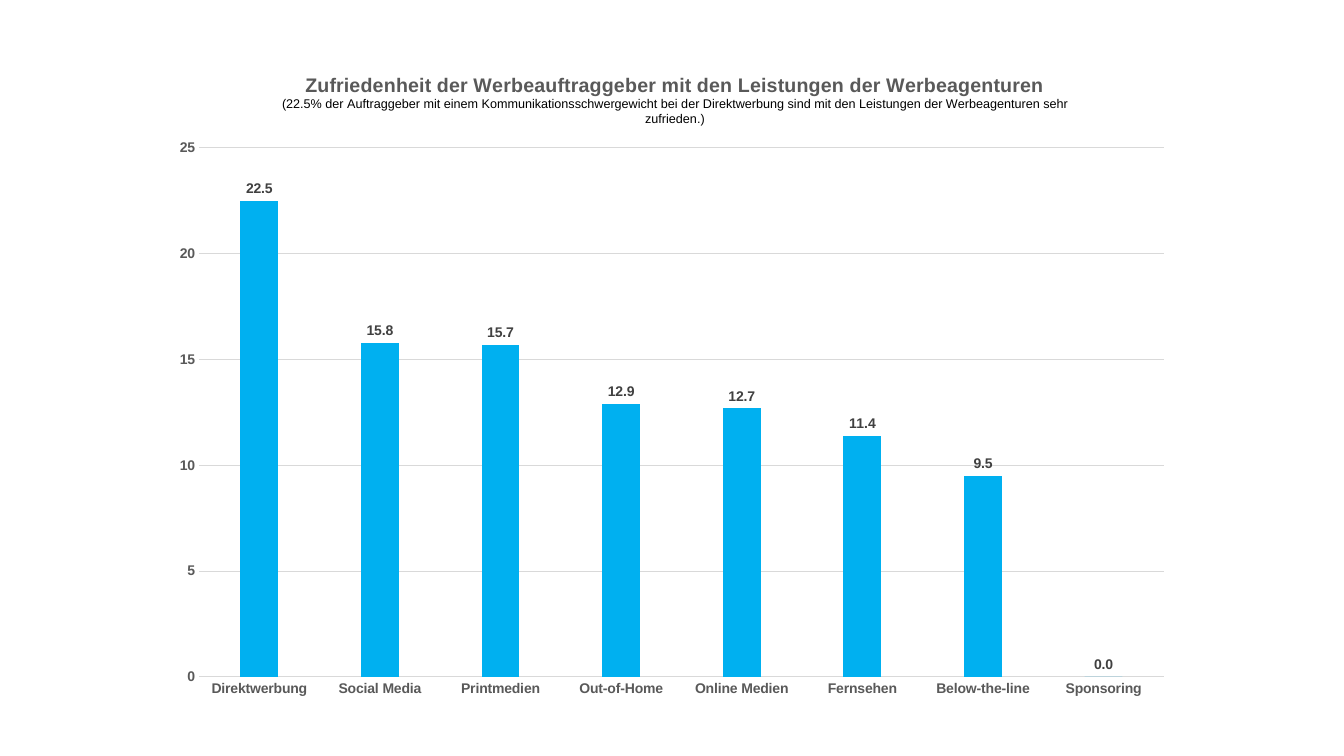
from typing import NamedTuple

from lxml import etree
from pptx import Presentation
from pptx import util as u
from pptx.chart.data import CategoryChartData
from pptx.dml.color import RGBColor
from pptx.enum import chart as ch
from pptx.enum import text
from pptx.oxml import ns

EMU_PER_PX = 914400 / 100.8
FONT = "Arial"
COLORS = {"bar": "00B0F0", "grid": "D9D9D9", "axis": "595959",
          "label": "404040", "subtitle": "000000"}


class Box(NamedTuple):
    left: int
    top: int
    width: int
    height: int


class TitleLine(NamedTuple):
    wording: str
    size: int
    bold: bool
    color: str


CHART = Box(159, 46, 1025, 663)
PLOT = Box(199, 148, 965, 529)
TITLE = Box(279, 70, 786, 52)

TITLE_LINES = [
    TitleLine("Zufriedenheit der Werbeauftraggeber mit den Leistungen der "
              "Werbeagenturen", 14, True, "axis"),
    TitleLine("(22.5% der Auftraggeber mit einem Kommunikationsschwergewicht bei "
              "der Direktwerbung sind mit den Leistungen der Werbeagenturen sehr "
              "zufrieden.)", 9, False, "subtitle"),
]
SATISFACTION = {
    "Direktwerbung": 22.5, "Social Media": 15.8, "Printmedien": 15.7,
    "Out-of-Home": 12.9, "Online Medien": 12.7, "Fernsehen": 11.4,
    "Below-the-line": 9.5, "Sponsoring": 0,
}


def px(length: int) -> u.Emu:
    return u.Emu(round(length * EMU_PER_PX))


def rgb(name: str) -> RGBColor:
    return RGBColor.from_string(COLORS[name])


def set_font(font, size: int, bold: bool, color: str) -> None:
    font.name = FONT
    font.size = u.Pt(size)
    font.bold = bold
    font.color.rgb = rgb(color)


def set_line(line) -> None:
    line.color.rgb = rgb("grid")
    line.width = u.Pt(0.75)


def set_layout(parent, before: str, box: Box, is_plot: bool) -> None:
    """Fix a chart part at a box given in slide px."""
    for old in parent.findall(ns.qn("c:layout")):
        parent.remove(old)
    layout = etree.Element(ns.qn("c:layout"))
    manual = etree.SubElement(layout, ns.qn("c:manualLayout"))
    settings = {"xMode": "edge", "yMode": "edge",
                "x": (box.left - CHART.left) / CHART.width,
                "y": (box.top - CHART.top) / CHART.height}
    if is_plot:
        settings = {"layoutTarget": "inner", **settings,
                    "w": box.width / CHART.width,
                    "h": box.height / CHART.height}
    for tag, value in settings.items():
        etree.SubElement(manual, ns.qn(f"c:{tag}")).set("val", str(value))
    parent.find(ns.qn(before)).addprevious(layout)


def add_title(chart) -> None:
    frame = chart.chart_title.text_frame
    for index, line in enumerate(TITLE_LINES):
        para = frame.add_paragraph() if index else frame.paragraphs[0]
        para.alignment = text.PP_ALIGN.CENTER
        para.add_run().text = line.wording
        set_font(para.font, line.size, line.bold, line.color)
    chart.chart_title.include_in_layout = False
    set_layout(frame._txBody.getparent().getparent(), "c:overlay", TITLE, False)


def format_axes(chart) -> None:
    for axis in (chart.category_axis, chart.value_axis):
        axis.major_tick_mark = ch.XL_TICK_MARK.NONE
        axis.minor_tick_mark = ch.XL_TICK_MARK.NONE
        set_font(axis.tick_labels.font, 10, True, "axis")
    set_line(chart.category_axis.format.line)
    values = chart.value_axis
    values.minimum_scale, values.maximum_scale, values.major_unit = 0, 25, 5
    values.format.line.fill.background()
    set_line(values.major_gridlines.format.line)
    values.tick_labels.number_format = "0"
    values.tick_labels.number_format_is_linked = False


def format_bars(plot) -> None:
    plot.gap_width = 219
    plot.overlap = -27
    plot.vary_by_categories = False
    fill = plot.series[0].format.fill
    fill.solid()
    fill.fore_color.rgb = rgb("bar")
    plot.has_data_labels = True
    labels = plot.data_labels
    labels.show_value = True
    labels.number_format = "0.0"
    labels.number_format_is_linked = False
    labels.position = ch.XL_LABEL_POSITION.OUTSIDE_END
    set_font(labels.font, 10, True, "label")


def main() -> None:
    deck = Presentation()
    deck.slide_width, deck.slide_height = px(1344), px(756)
    page = deck.slides.add_slide(deck.slide_layouts[6])
    data = CategoryChartData(number_format="0.0")
    data.categories = list(SATISFACTION)
    data.add_series("Series 1", list(SATISFACTION.values()))
    chart = page.shapes.add_chart(ch.XL_CHART_TYPE.COLUMN_CLUSTERED,
                                  *map(px, CHART), data).chart
    chart.has_legend = False
    chart.font.name = "Calibri"
    chart.font.size = u.Pt(10)
    add_title(chart)
    format_axes(chart)
    format_bars(chart.plots[0])
    set_layout(chart.plots[0]._element.getparent(), "c:barChart", PLOT, True)
    deck.save("out.pptx")


if __name__ == "__main__":
    main()
